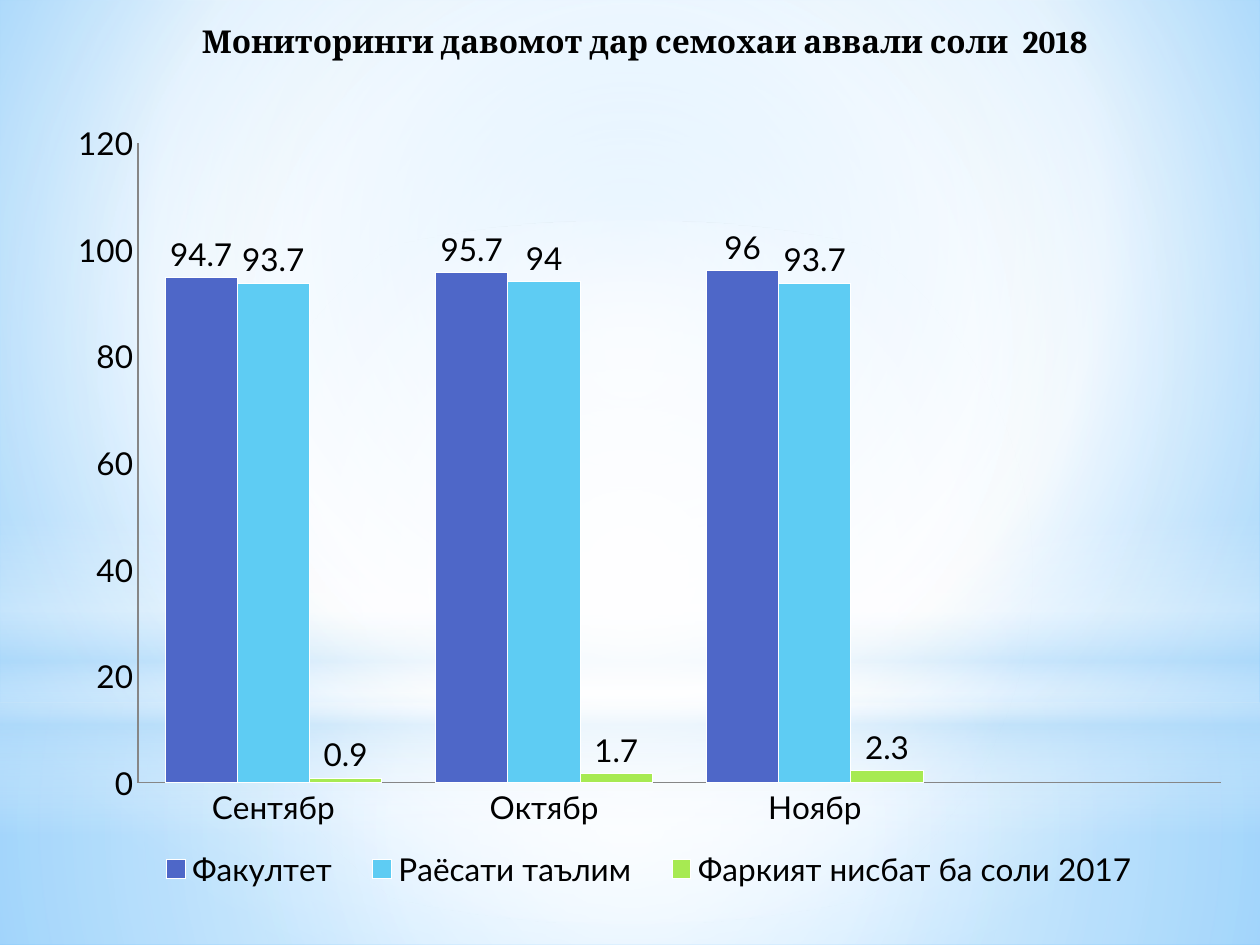
from lxml.etree import SubElement as Sub
from pptx import Presentation
from pptx.chart.data import CategoryChartData as Data
from pptx.dml.color import RGBColor as RGB
from pptx.enum.chart import XL_CHART_TYPE as Kind
from pptx.enum.chart import XL_LABEL_POSITION as Spot
from pptx.enum.chart import XL_LEGEND_POSITION as Side
from pptx.enum.chart import XL_TICK_MARK as Tick
from pptx.enum.shapes import MSO_SHAPE as Form
from pptx.enum.text import MSO_ANCHOR as Anchor
from pptx.enum.text import MSO_AUTO_SIZE as Auto
from pptx.enum.text import PP_ALIGN as Align
from pptx.oxml.ns import qn
from pptx.util import Emu, Pt

SCALE = 914400 / 126  # EMU in one px

COLOR = {
    "text": "000000", "axis": "868686", "white": "FFFFFF",
    "haze": "B4DCFA", "sky": "9ED5FF", "deep": "5BB9FF",
    "blue": "4E67C8", "cyan": "5ECCF3", "green": "A7EA52",
}
MID = (50, 50, 50, 50)

# Backdrop: shape, box in px, stops (position, colour, opacity), focus
LAYERS = [
    (Form.RECTANGLE, (0, 703, 1260, 242),
     [(0, "white", 91), (37, "white", 76), (100, "haze", 79)], MID),
    (Form.RECTANGLE, (0, 0, 1260, 703),
     [(0, "white", 89), (48, "white", 62), (100, "haze", 79)], MID),
    (Form.RECTANGLE, (0, 519, 1260, 315),
     [(0, "white", 0), (29, "white", 30), (45, "haze", 40),
      (55, "white", 26), (65, "haze", 60), (100, "white", 0)], None),
    (Form.OVAL, (0, 221, 1260, 703),
     [(0, "white", 100), (56, "white", 0)], MID),
]

# Boxes of the chart and its parts in px
CHART = (54, 108, 1191, 794)
PLOT = (138, 143, 1083, 640)
KEY = (136, 846, 1026, 46)

TITLE = "Мониторинги давомот дар семохаи аввали соли  2018"
MONTHS = ["Сентябр", "Октябр", "Ноябр", ""]
SERIES = [
    ("Факултет", "blue", (94.7, 95.7, 96, None)),
    ("Раёсати таълим", "cyan", (93.7, 94, 93.7, None)),
    ("Фаркият нисбат ба соли 2017", "green", (0.9, 1.7, 2.3, None)),
]


def px(n):
    return Emu(round(n * SCALE))


def rgb(name):
    return RGB.from_string(COLOR[name])


def put(item, form):
    for key, val in form.items():
        setattr(item, key, val)


def place(item, box):
    put(item, dict(zip(("left", "top", "width", "height"), map(px, box))))


def font(item, face, bold=False):
    put(item, {"name": face, "size": Pt(18), "bold": bold})
    item.color.rgb = rgb("text")


def blend(owner, fill, stops, focus):
    """Fill with a circular gradient, or a vertical one without focus."""
    fill.gradient()
    grad = next(owner.element.iter(qn("a:gradFill")))
    grad.clear()
    grad.set("rotWithShape", "1")
    row = Sub(grad, qn("a:gsLst"))
    for pos, name, alpha in stops:
        stop = Sub(row, qn("a:gs"), pos=str(pos * 1000))
        tone = Sub(stop, qn("a:srgbClr"), val=COLOR[name])
        if alpha < 100:
            Sub(tone, qn("a:alpha"), val=str(alpha * 1000))
    if focus:
        path = Sub(grad, qn("a:path"), path="circle")
        edges = {k: str(v * 1000) for k, v in zip("ltrb", focus)}
        Sub(path, qn("a:fillToRect"), edges)
    else:
        Sub(grad, qn("a:lin"), ang="5400000", scaled="0")


def add_layer(slide, form, box, stops, focus):
    shape = slide.shapes.add_shape(form, *map(px, box))
    shape.shadow.inherit = False
    shape.line.fill.background()
    blend(shape, shape.fill, stops, focus)


def fix(part, index, box, inner=False):
    """Set the box of a chart part as shares of the chart."""
    for old in part.findall(qn("c:layout")):
        part.remove(old)
    frame = Sub(part, qn("c:layout"))
    part.insert(index, frame)
    spot = Sub(frame, qn("c:manualLayout"))
    if inner:
        Sub(spot, qn("c:layoutTarget"), val="inner")
    for key in "xy":
        Sub(spot, qn(f"c:{key}Mode"), val="edge")
    left, top, wide, high = CHART
    shares = ((box[0] - left) / wide, (box[1] - top) / high,
              box[2] / wide, box[3] / high)
    for key, share in zip("xywh", shares):
        Sub(spot, qn(f"c:{key}"), val=f"{share:.4f}")


def add_chart(slide):
    data = Data()
    data.categories = MONTHS
    for name, _, vals in SERIES:
        data.add_series(name, vals)
    chart = slide.shapes.add_chart(
        Kind.COLUMN_CLUSTERED, *map(px, CHART), data).chart
    put(chart, {"has_title": False, "has_legend": True})
    font(chart.font, "Lato")
    put(chart.legend, {"position": Side.BOTTOM, "include_in_layout": False})
    fix(next(chart.element.iter(qn("c:plotArea"))), 0, PLOT, inner=True)
    fix(next(chart.element.iter(qn("c:legend"))), 1, KEY)

    # Axes
    for axis in (chart.category_axis, chart.value_axis):
        put(axis, {"has_major_gridlines": False,
                   "major_tick_mark": Tick.NONE,
                   "minor_tick_mark": Tick.NONE})
        axis.format.line.color.rgb = rgb("axis")
        axis.format.line.width = Pt(0.75)
    put(chart.value_axis, {"minimum_scale": 0, "maximum_scale": 120,
                           "major_unit": 20})

    # Columns and their labels
    plot = chart.plots[0]
    put(plot, {"gap_width": 75, "overlap": 0, "vary_by_categories": False})
    for bar, (_, color, _) in zip(plot.series, SERIES):
        bar.format.fill.solid()
        bar.format.fill.fore_color.rgb = rgb(color)
        bar.format.line.color.rgb = rgb("white")
        put(bar.data_labels, {"show_value": True,
                              "position": Spot.OUTSIDE_END})


def add_title(slide, box):
    title = slide.shapes.title
    slide.shapes.element.append(title.element)  # in front of the backdrop
    place(title, box)
    frame = title.text_frame
    put(frame, {"text": TITLE, "word_wrap": True,
                "vertical_anchor": Anchor.TOP,
                "auto_size": Auto.SHAPE_TO_FIT_TEXT,
                "margin_left": px(68)})
    para = frame.paragraphs[0]
    para.alignment = Align.LEFT
    font(para.runs[0].font, "Cambria", bold=True)


def main():
    deck = Presentation()
    put(deck, {"slide_width": px(1260), "slide_height": px(945)})
    slide = deck.slides.add_slide(deck.slide_layouts[5])

    # Backdrop
    blend(slide, slide.background.fill,
          [(0, "sky", 100), (60, "white", 100), (100, "deep", 100)],
          (20, 10, 20, 60))
    for layer in LAYERS:
        add_layer(slide, *layer)

    # Content
    add_chart(slide)
    add_title(slide, (134, 16, 1032, 50))
    deck.save("out.pptx")


if __name__ == "__main__":
    main()
